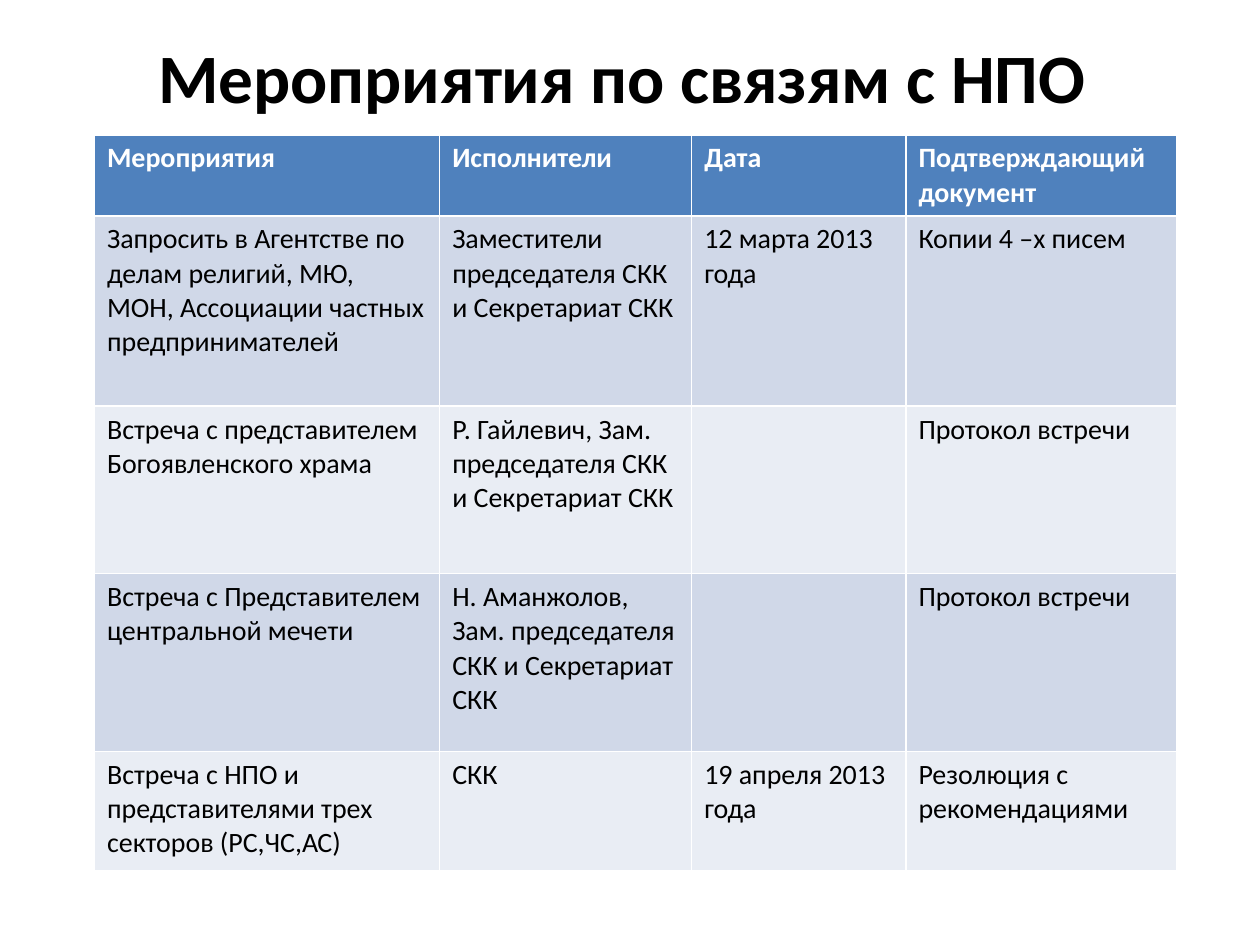
from pptx import Presentation
from pptx.dml.color import RGBColor
from pptx.enum.text import MSO_ANCHOR, PP_ALIGN
from pptx.util import Inches, Pt

MIDDLE = MSO_ANCHOR.MIDDLE
CENTER = PP_ALIGN.CENTER
BLACK = RGBColor(0x00, 0x00, 0x00)
WHITE = RGBColor(0xFF, 0xFF, 0xFF)
BLUE = RGBColor(0x4F, 0x81, 0xBD)
BANDS = (RGBColor(0xE9, 0xED, 0xF4), RGBColor(0xD0, 0xD8, 0xE8))
FONT = "Calibri"

WIDTHS = (2.74, 2, 1.7, 2.15)
HEIGHTS = (0.4, 1.51, 1.33, 1.41, 0.95)
ROWS = (
    ("Мероприятия", "Исполнители", "Дата", "Подтверждающий документ"),
    ("Запросить в Агентстве по делам религий, МЮ, МОН, Ассоциации частных предпринимателей",
     "Заместители председателя СКК и Секретариат СКК",
     "12 марта 2013 года", "Копии 4 –х писем"),
    ("Встреча с представителем Богоявленского храма",
     "Р. Гайлевич, Зам. председателя СКК и Секретариат СКК",
     "", "Протокол встречи"),
    ("Встреча с Представителем центральной мечети",
     "Н. Аманжолов, Зам. председателя СКК и Секретариат СКК",
     "", "Протокол встречи"),
    ("Встреча с НПО и представителями трех секторов (РС,ЧС,АС)",
     "СКК", "19 апреля 2013 года", "Резолюция с рекомендациями"),
)


def style(par, size, color, bold):
    """Set the font of one paragraph."""
    font = par.font
    font.name, font.size, font.bold = FONT, Pt(size), bold
    font.color.rgb = color


def add_title(slide, left, top, width, height):
    """Place and format the slide title in the given box."""
    title = slide.shapes.title
    title.left, title.top = Inches(left), Inches(top)
    title.width, title.height = Inches(width), Inches(height)
    frame = title.text_frame
    frame.text = "Мероприятия по связям с НПО "
    frame.vertical_anchor = MIDDLE
    par = frame.paragraphs[0]
    par.alignment = CENTER
    style(par, 39.6, BLACK, True)


def add_plan(slide, left, top, width, height):
    """Place the table of events in the given box."""
    table = slide.shapes.add_table(
        len(ROWS), len(WIDTHS), Inches(left), Inches(top),
        Inches(width), Inches(height)).table
    for col, size in zip(table.columns, WIDTHS):
        col.width = Inches(size)
    for row, size in zip(table.rows, HEIGHTS):
        row.height = Inches(size)
    for i, texts in enumerate(ROWS):
        head = i == 0
        for j, text in enumerate(texts):
            cell = table.cell(i, j)
            cell.text = text
            cell.fill.solid()
            cell.fill.fore_color.rgb = BLUE if head else BANDS[i % 2]
            style(cell.text_frame.paragraphs[0], 16,
                  WHITE if head else BLACK, head)


def main():
    """Build and save the slide."""
    deck = Presentation()
    deck.slide_width, deck.slide_height = Inches(10), Inches(7.5)
    slide = deck.slides.add_slide(deck.slide_layouts[5])
    add_title(slide, 0.5, 0.3, 9, 0.61)
    add_plan(slide, 0.75, 1.07, sum(WIDTHS), sum(HEIGHTS))
    deck.save("out.pptx")


if __name__ == "__main__":
    main()
